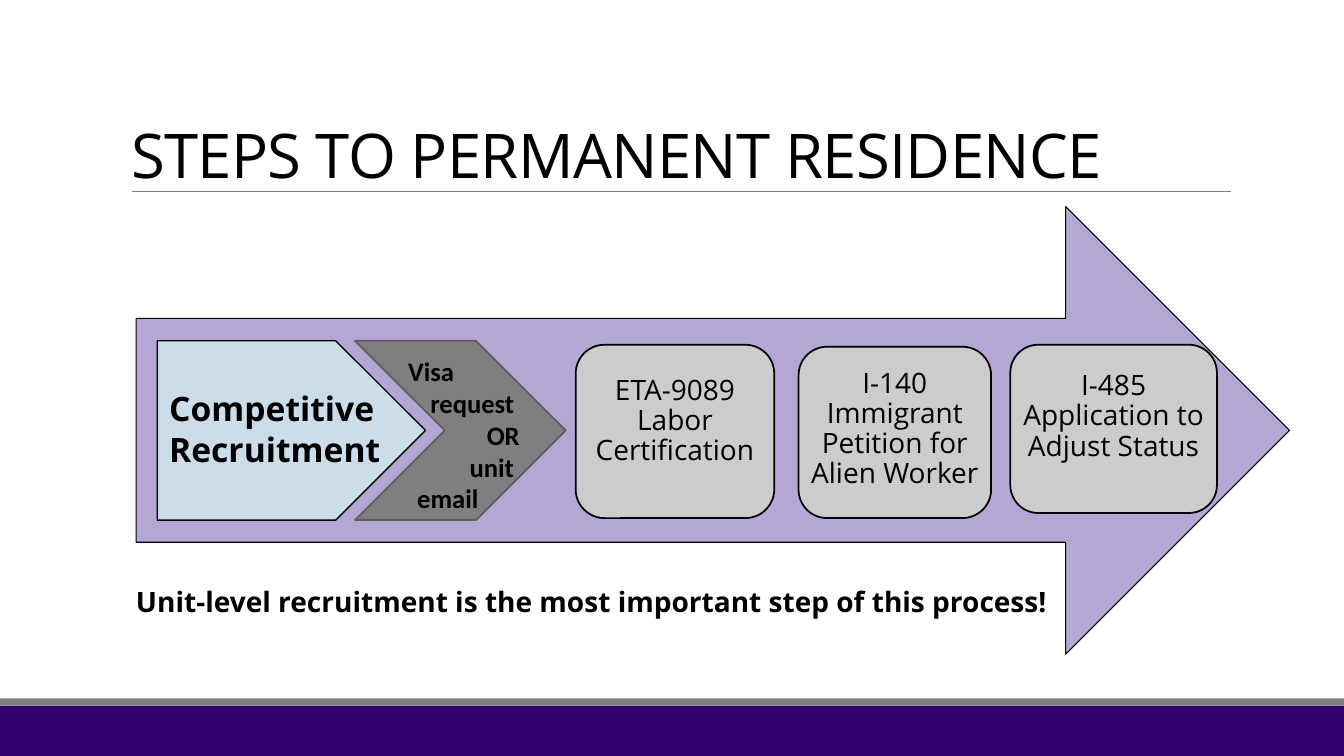
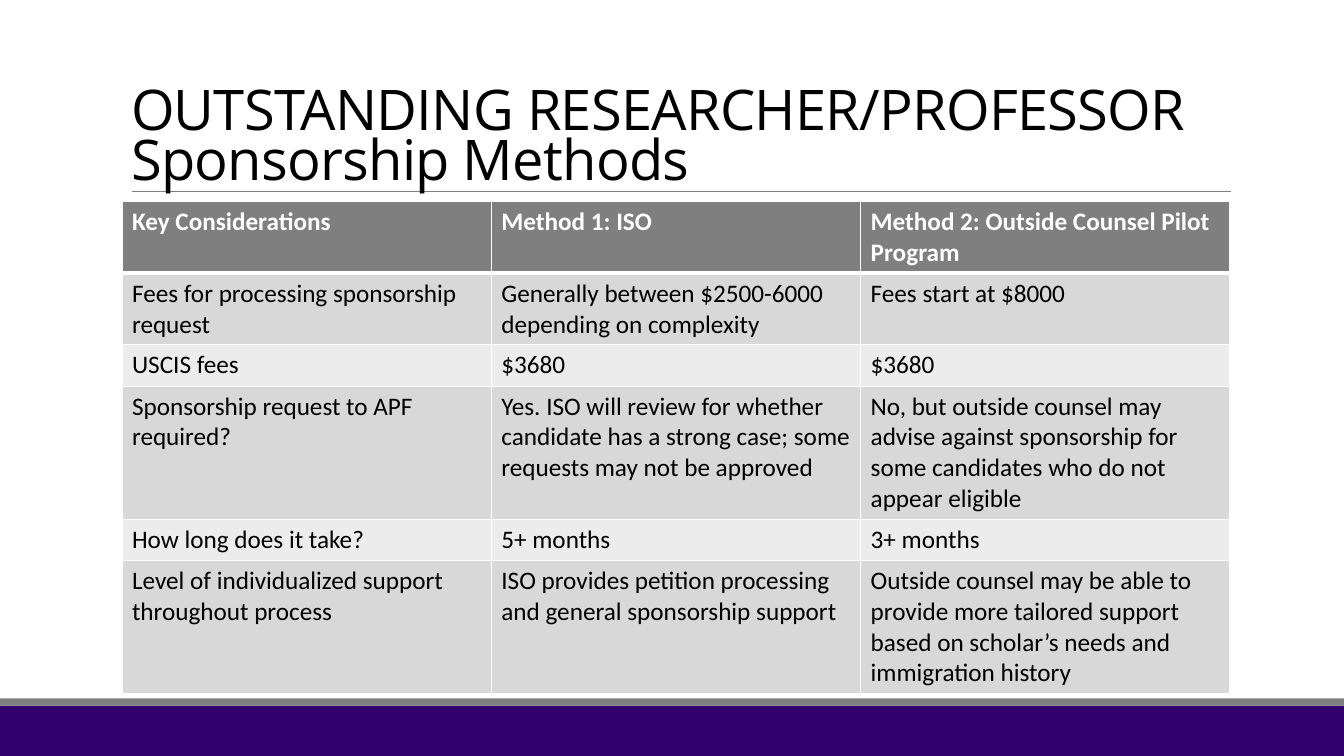
from dataclasses import dataclass

from lxml import etree
from pptx import Presentation
from pptx.dml.color import RGBColor
from pptx.enum.shapes import MSO_CONNECTOR, MSO_SHAPE
from pptx.enum.text import MSO_ANCHOR, MSO_AUTO_SIZE, PP_ALIGN
from pptx.oxml.ns import qn
from pptx.util import Inches, Pt

RECT, ROUNDED = MSO_SHAPE.RECTANGLE, MSO_SHAPE.ROUNDED_RECTANGLE
ARROW, PENTAGON, CHEVRON = MSO_SHAPE.RIGHT_ARROW, MSO_SHAPE.PENTAGON, MSO_SHAPE.CHEVRON
STRAIGHT = MSO_CONNECTOR.STRAIGHT
TOP, MIDDLE = MSO_ANCHOR.TOP, MSO_ANCHOR.MIDDLE
LEFT, CENTER = PP_ALIGN.LEFT, PP_ALIGN.CENTER
NO_AUTOFIT = MSO_AUTO_SIZE.NONE

HEADING_FONT, BODY_FONT = "Open Sans", "Calibri"
COLORS = {
    "purple": "33006F", "lilac": "B4A7D6", "sky": "CCDDEA",
    "gray": "7F7F7F", "rule": "808080", "edge": "5E5E5E", "step": "CCCCCC",
    "row_dark": "D8D8D8", "row_light": "ECECEC",
    "black": "000000", "white": "FFFFFF",
}
SLIDE_W, SLIDE_H = 13.33, 7.5
CONTENT_LEFT, CONTENT_W = 1.2, 11
TITLE_ONLY = 5


@dataclass(frozen=True)
class Box:
    left: float
    top: float
    width: float
    height: float

    def lengths(self) -> tuple:
        return tuple(Inches(v) for v in (self.left, self.top, self.width, self.height))


@dataclass(frozen=True)
class Step:
    text: str
    box: Box
    lift: float  # how far the text sits above the middle


STEPS = [
    Step("ETA-9089 Labor Certification", Box(5.71, 3.42, 1.97, 1.72), 0.1),
    Step("I-140 Immigrant Petition for Alien Worker", Box(7.92, 3.44, 1.91, 1.7), 0.03),
    Step("I-485 Application to Adjust Status", Box(10.02, 3.42, 2.05, 1.67), 0.12),
]

# Words of the chevron, each with its indent
REQUEST_WORDS = [("Visa", 0.02), ("request", 0.24), ("OR", 0.8), ("unit", 0.63), ("email", 0.11)]

METHODS = [
    ("Key Considerations", "Method 1: ISO", "Method 2: Outside Counsel Pilot Program"),
    ("Fees for processing sponsorship request",
     "Generally between $2500-6000 depending on complexity", "Fees start at $8000"),
    ("USCIS fees", "$3680", "$3680"),
    ("Sponsorship request to APF required?",
     "Yes. ISO will review for whether candidate has a strong case; "
     "some requests may not be approved",
     "No, but outside counsel may advise against sponsorship for some candidates "
     "who do not appear eligible"),
    ("How long does it take?", "5+ months", "3+ months"),
    ("Level of individualized support throughout process",
     "ISO provides petition processing and general sponsorship support",
     "Outside counsel may be able to provide more tailored support based on "
     "scholar’s needs and immigration history"),
]
ROW_HEIGHTS = [0.71, 0.71, 0.41, 1.32, 0.41, 1.32]


def rgb(color: str) -> RGBColor:
    return RGBColor.from_string(COLORS[color])


def set_font(paragraph, name: str, size: float, color: str = "black", bold: bool = False) -> None:
    font = paragraph.font
    font.name, font.size, font.bold = name, Pt(size), bold
    font.color.rgb = rgb(color)


def set_margins(frame, left: float, top: float, right: float, bottom: float) -> None:
    frame.margin_left, frame.margin_top = Inches(left), Inches(top)
    frame.margin_right, frame.margin_bottom = Inches(right), Inches(bottom)


def add_panel(slide, kind, box: Box, fill: str, line: str = "", line_width: float = 1):
    panel = slide.shapes.add_shape(kind, *box.lengths())
    panel.shadow.inherit = False
    panel.fill.solid()
    panel.fill.fore_color.rgb = rgb(fill)
    if line:
        panel.line.color.rgb = rgb(line)
        panel.line.width = Pt(line_width)
    else:
        panel.line.fill.background()
    return panel


def add_caption(slide, box: Box, lines: list[str], font: str, size: float, margin: float):
    frame = slide.shapes.add_textbox(*box.lengths()).text_frame
    frame.word_wrap = True
    set_margins(frame, 0.1, margin, 0.1, margin)
    frame.text = "\n".join(lines)
    for paragraph in frame.paragraphs:
        set_font(paragraph, font, size, bold=True)
    return frame


def build_layout(layout, slide) -> None:
    """Draw the bands and the title rule, and hand them over to the layout."""
    for placeholder in list(layout.placeholders):
        if placeholder.placeholder_format.idx != 0:
            layout.shapes.element.remove(placeholder.element)
    footer = add_panel(slide, RECT, Box(0, 7, SLIDE_W, 0.5), "purple")
    stripe = add_panel(slide, RECT, Box(0, 6.93, SLIDE_W, 0.07), "gray")
    rule = slide.shapes.add_connector(
        STRAIGHT, Inches(1.31), Inches(1.9), Inches(12.21), Inches(1.9))
    rule.line.color.rgb = rgb("rule")
    rule.line.width = Pt(0.5)
    etree.SubElement(rule.element.spPr, qn("a:effectLst"))
    for part in (footer, stripe, rule):
        layout.shapes.element.append(part.element)


def set_title(slide, text: str, top: float, height: float, size: float, spacing: float) -> None:
    title = slide.shapes.title
    title.left, title.top, title.width, title.height = Box(
        CONTENT_LEFT, top, CONTENT_W, height).lengths()
    frame = title.text_frame
    frame.text = text
    frame.auto_size, frame.word_wrap, frame.vertical_anchor = NO_AUTOFIT, True, MIDDLE
    set_margins(frame, 0.1, 0, 0.1, 0)
    paragraph = frame.paragraphs[0]
    paragraph.alignment, paragraph.line_spacing = LEFT, spacing
    set_font(paragraph, HEADING_FONT, size)
    paragraph.runs[0].font.element.set("spc", "-50") if hasattr(
        paragraph.runs[0].font, "element") else paragraph.runs[0]._r.get_or_add_rPr().set("spc", "-50")


def add_step(slide, step: Step) -> None:
    frame = add_panel(slide, ROUNDED, step.box, "step", "black", 1.25).text_frame
    frame.word_wrap, frame.vertical_anchor = True, MIDDLE
    set_margins(frame, 0, 0, 0, 2 * step.lift)
    frame.text = step.text
    paragraph = frame.paragraphs[0]
    paragraph.alignment, paragraph.line_spacing = CENTER, 0.9
    set_font(paragraph, HEADING_FONT, 20)


def set_border(cell, side: str, width: float) -> None:
    line = etree.SubElement(cell._tc.get_or_add_tcPr(), qn(f"a:{side}"), w=str(Pt(width)))
    fill = etree.SubElement(line, qn("a:solidFill"))
    etree.SubElement(fill, qn("a:srgbClr"), val=COLORS["white"])


def fill_cell(cell, text: str, row: int) -> None:
    heading = row == 0
    for side in ("lnL", "lnR", "lnT", "lnB"):
        under_heading = (row, side) in ((0, "lnB"), (1, "lnT"))
        set_border(cell, side, 3 if under_heading else 1)
    cell.fill.solid()
    cell.fill.fore_color.rgb = rgb(
        "gray" if heading else "row_dark" if row % 2 else "row_light")
    cell.vertical_anchor = TOP
    cell.text = text
    set_font(cell.text_frame.paragraphs[0], BODY_FONT, 18,
             "white" if heading else "black", heading)


def build_steps(slide) -> None:
    set_title(slide, "STEPS TO PERMANENT RESIDENCE", 1.23, 0.71, 44, 0.85)

    # Big arrow with the three filings
    add_panel(slide, ARROW, Box(1.35, 2.05, 11.44, 4.44), "lilac", "black", 0.75)
    for step in STEPS:
        add_step(slide, step)

    # Recruitment and request
    add_panel(slide, PENTAGON, Box(1.56, 3.38, 2.66, 1.78), "sky", "black", 1)
    add_caption(slide, Box(1.58, 3.75, 2.33, 1.02), ["Competitive", "Recruitment"],
                HEADING_FONT, 24, 0.1)
    add_panel(slide, CHEVRON, Box(3.52, 3.38, 2.09, 1.78), "gray", "edge", 1.25)
    request = add_caption(slide, Box(3.93, 3.47, 1.45, 1.7),
                          [word for word, _ in REQUEST_WORDS], BODY_FONT, 19, 0.05)
    for paragraph, (_, indent) in zip(request.paragraphs, REQUEST_WORDS):
        properties = paragraph._p.get_or_add_pPr()
        properties.set("marL", str(Inches(indent)))
        properties.set("indent", "0")

    # Closing remark
    add_caption(slide, Box(1.25, 5.7, 9.32, 0.72),
                ["Unit-level recruitment is the most important step of this process!"],
                HEADING_FONT, 20, 0.1)


def build_methods(slide) -> None:
    set_title(slide, "OUTSTANDING RESEARCHER/PROFESSOR Sponsorship Methods",
              0.83, 1.13, 40, 0.75)

    # Comparison of the two methods
    column_count = len(METHODS[0])
    box = Box(CONTENT_LEFT + 0.01, 2, CONTENT_W - 0.01, sum(ROW_HEIGHTS))
    table = slide.shapes.add_table(len(METHODS), column_count, *box.lengths()).table
    for row, (texts, height) in enumerate(zip(METHODS, ROW_HEIGHTS)):
        table.rows[row].height = Inches(height)
        for column, text in enumerate(texts):
            fill_cell(table.cell(row, column), text, row)


def main() -> None:
    deck = Presentation()
    deck.slide_width, deck.slide_height = Inches(SLIDE_W), Inches(SLIDE_H)
    layout = deck.slide_layouts[TITLE_ONLY]
    steps, methods = (deck.slides.add_slide(layout) for _ in range(2))
    build_layout(layout, steps)
    build_steps(steps)
    build_methods(methods)
    deck.save("out.pptx")


if __name__ == "__main__":
    main()
